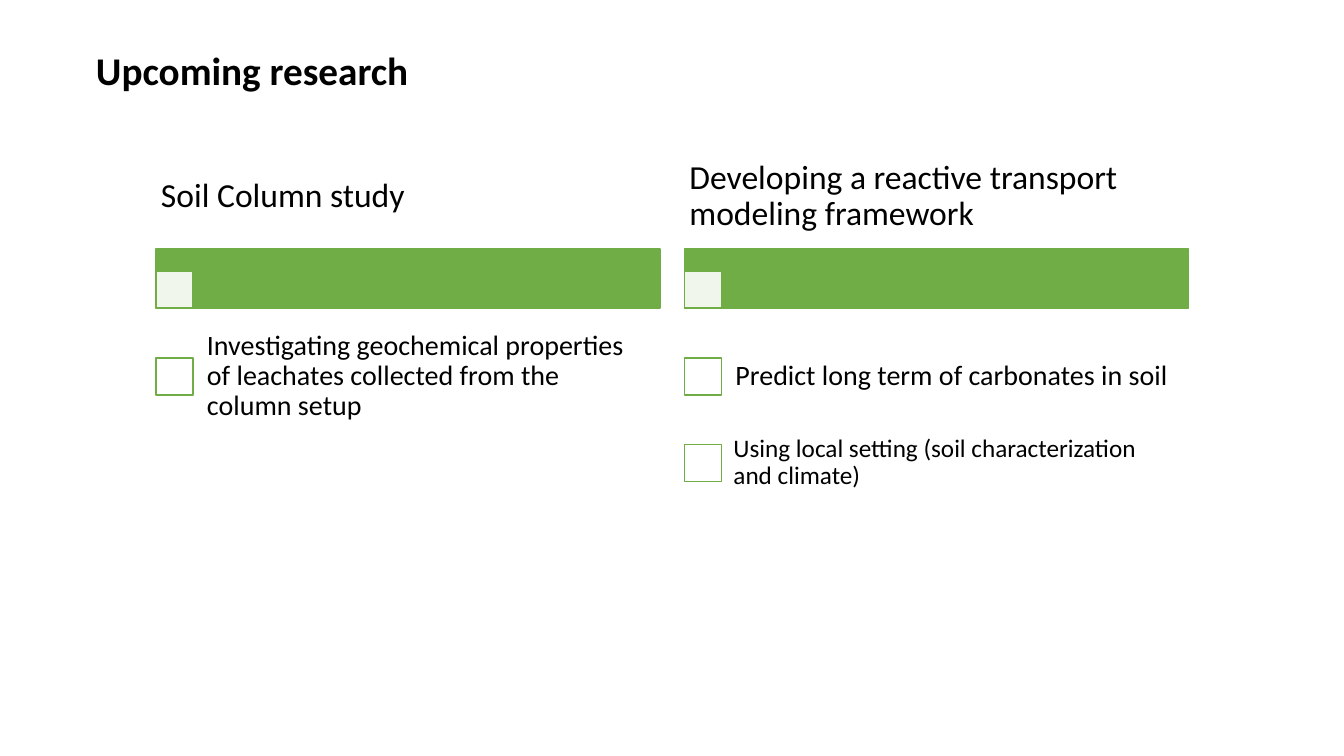
from lxml.etree import SubElement
from pptx import Presentation
from pptx.dml.color import RGBColor
from pptx.enum.shapes import MSO_SHAPE
from pptx.enum.text import MSO_ANCHOR, MSO_AUTO_SIZE, PP_ALIGN
from pptx.oxml.ns import qn
from pptx.util import Pt

TITLE = "Upcoming research"
COLUMNS = [
    ("Soil Column study", [
        ("Investigating geochemical properties of leachates collected from the column setup", 20, 16),
    ]),
    ("Developing a reactive transport modeling framework", [
        ("Predict long term of carbonates in soil", 20, 16),
        ("Using local setting (soil characterization and climate)", 18, 14),
    ]),
]
HEX = {"green": "70AD47", "white": "FFFFFF", "black": "000000"}
FONT = {"name": "Calibri", "bold": False}
FRAME = {"word_wrap": True, "auto_size": MSO_AUTO_SIZE.NONE,
         "vertical_anchor": MSO_ANCHOR.MIDDLE}
PARA = {"alignment": PP_ALIGN.LEFT, "line_spacing": 0.9}

LEFT, STEP, WIDE = 156, 528.5, 504
BOX, INDENT = 37, 35
ROW, PITCH, TALL = 333, 86.5, 87


def px(n):
    return round(n * 914400 / 100.8)


def apply(item, values):
    for key, value in values.items():
        setattr(item, key, value)


def color(key):
    return RGBColor.from_string(HEX[key])


def place(shape, *box):
    apply(shape, dict(zip(("left", "top", "width", "height"), map(px, box))))


def write(shape, text, size, pad, **extra):
    frame = shape.text_frame
    frame.text = text
    side, edge = map(px, pad)
    apply(frame, FRAME | {"margin_left": side, "margin_right": side,
                          "margin_top": edge, "margin_bottom": edge})
    para = frame.paragraphs[0]
    apply(para, PARA)
    font = para.runs[0].font
    apply(font, FONT | {"size": Pt(size)} | extra)
    font.color.rgb = color("black")


def label(box, text, size, pad):
    write(slide.shapes.add_textbox(*map(px, box)), text, size, pad)


def rect(box, fill, alpha=None):
    shape = slide.shapes.add_shape(MSO_SHAPE.RECTANGLE, *map(px, box))
    shape.shadow.inherit = False
    shape.fill.solid()
    shape.fill.fore_color.rgb = color(fill)
    shape.line.color.rgb = color("green")
    shape.line.width = Pt(1)
    if alpha:
        tint = shape.fill._xPr.find(qn("a:solidFill"))[0]
        SubElement(tint, qn("a:alpha"), val=str(alpha * 1000))


deck = Presentation()
deck.slide_width, deck.slide_height = px(1344), px(756)
slide = deck.slides.add_slide(deck.slide_layouts[5])
title = slide.shapes.title
place(title, 86, 41, 754, 57)
write(title, TITLE, 28, (10, 5), bold=True)
title.text_frame.paragraphs[0].line_spacing = 1.0

for col, (head, items) in enumerate(COLUMNS):
    x = LEFT + col * STEP
    rect((x, 249, WIDE, 59), "green")
    rect((x, 271, BOX, BOX), "white", 90)
    label((x, 143, WIDE, 107), head, 24, (5, 3))
    for row, (text, size, pad) in enumerate(items):
        y = ROW + row * PITCH
        rect((x, y + (TALL - BOX) / 2, BOX, BOX), "white")
        label((x + INDENT, y, WIDE - INDENT, TALL), text, size, (pad, pad))

deck.save("out.pptx")
